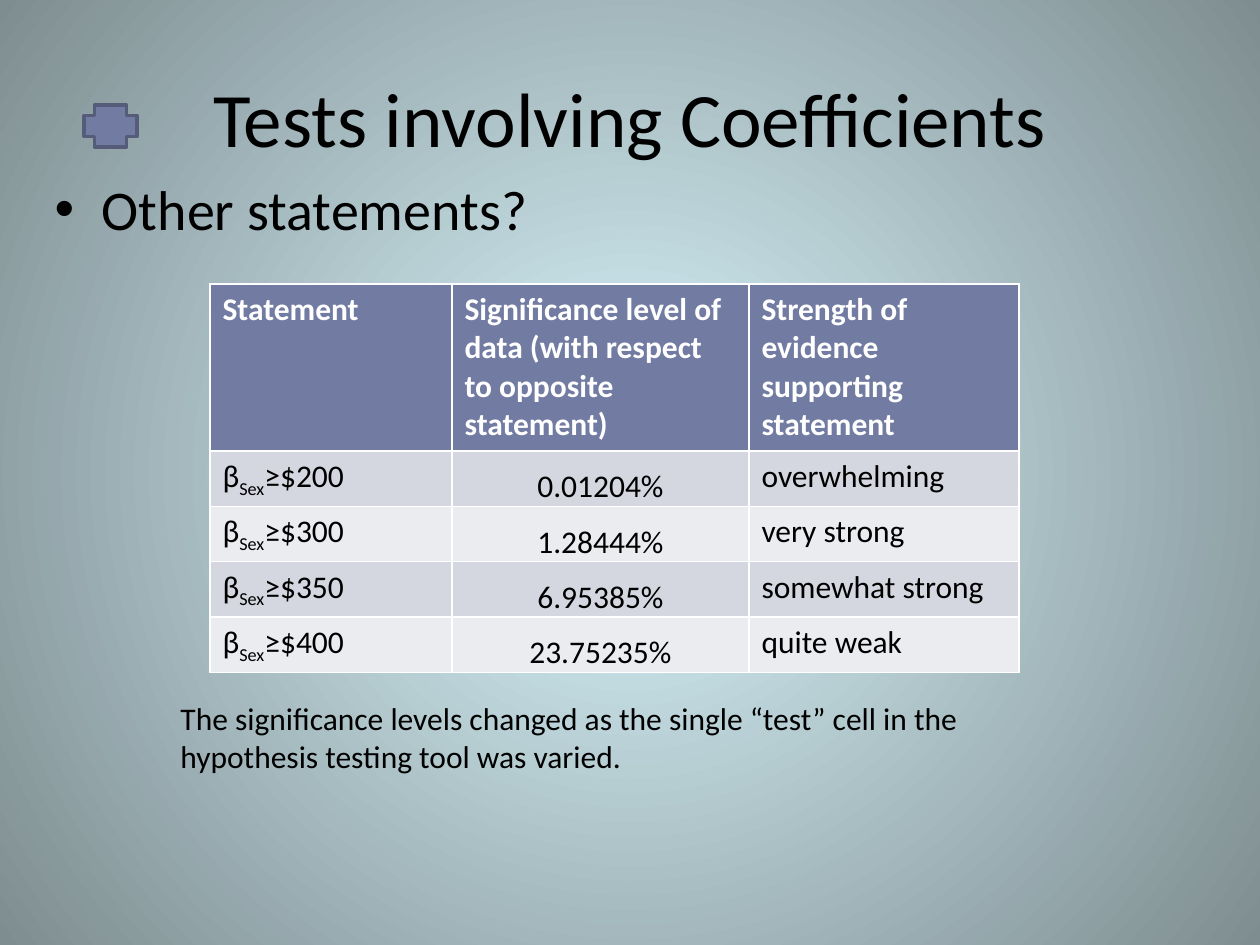
from dataclasses import dataclass

from pptx import Presentation
from pptx.dml.color import RGBColor as RGB
from pptx.enum.shapes import MSO_SHAPE as Shape
from pptx.enum.text import MSO_ANCHOR as Anchor, MSO_AUTO_SIZE as AutoSize, PP_ALIGN as Align
from pptx.oxml import parse_xml
from pptx.oxml.ns import nsdecls, qn
from pptx.util import Emu, Pt

PX_PER_INCH = 126


@dataclass(frozen=True)
class Theme:
    """Colours, font and type sizes of the slide."""
    font: str = "Calibri"
    title: int = 44
    bullet: int = 32
    text: int = 18
    ink: RGB = RGB(0x00, 0x00, 0x00)
    white: RGB = RGB(0xFF, 0xFF, 0xFF)
    accent: RGB = RGB(0x72, 0x7C, 0xA3)
    outline: RGB = RGB(0x54, 0x5C, 0x79)
    bands: tuple = (RGB(0xD5, 0xD7, 0xE0), RGB(0xEB, 0xEC, 0xF0))
    glow: tuple = (RGB(0xD9, 0xF5, 0xFC), RGB(0x7E, 0x8D, 0x90))


THEME = Theme()
HEADINGS = (
    "Statement",
    "Significance level of data (with respect to opposite statement)",
    "Strength of evidence supporting statement",
)
FINDINGS = (
    ("≥$200", "0.01204%", "overwhelming"),
    ("≥$300", "1.28444%", "very strong"),
    ("≥$350", "6.95385%", "somewhat strong"),
    ("≥$400", "23.75235%", "quite weak"),
)
COLUMN_WIDTHS = (242, 297, 270)
HEADER_HEIGHT, ROW_HEIGHT = 167, 55


def px(length):
    """Turn whole px into EMU."""
    return Emu(round(length * 914400 / PX_PER_INCH))


def place(part, box):
    """Move a placeholder to a box in px."""
    part.left, part.top, part.width, part.height = map(px, box)


def style(paragraph, size, color=THEME.ink, bold=False):
    """Set the font of a whole paragraph."""
    font = paragraph.font
    font.name, font.size, font.bold = THEME.font, Pt(size), bold
    font.color.rgb = color


def paint_background(slide):
    """Fill the slide with a glow that darkens from its centre."""
    fill = slide.background.fill
    fill.gradient()
    for stop, color, position in zip(fill.gradient_stops, THEME.glow, (0, 1)):
        stop.color.rgb, stop.position = color, position
    gradient = slide.element.find(".//" + qn("a:gradFill"))
    gradient.replace(gradient.find(qn("a:lin")), parse_xml(
        f'<a:path {nsdecls("a")} path="circle">'
        '<a:fillToRect l="50000" t="50000" r="50000" b="50000"/></a:path>'))


def fill_heading(title, box):
    """Place the centred title."""
    place(title, box)
    title.text_frame.text = "Tests involving Coefficients"
    title.text_frame.vertical_anchor = Anchor.MIDDLE
    paragraph = title.text_frame.paragraphs[0]
    paragraph.alignment = Align.CENTER
    style(paragraph, THEME.title)


def fill_question(body, box):
    """Place the bulleted question."""
    place(body, box)
    body.text_frame.text = "Other statements?"
    style(body.text_frame.paragraphs[0], THEME.bullet)


def write_statement(paragraph, bound):
    """Write a bound on the coefficient with its subscript."""
    for text, baseline in (("β", None), ("Sex", "-25000"), (bound, None)):
        run = paragraph.add_run()
        run.text = text
        if baseline:
            run.font._element.set("baseline", baseline)


def add_findings(slide, box):
    """Add the table of statements and their evidence."""
    table = slide.shapes.add_table(
        len(FINDINGS) + 1, len(HEADINGS), *map(px, box)).table
    for column, width in zip(table.columns, COLUMN_WIDTHS):
        column.width = px(width)
    for index, row in enumerate(table.rows):
        row.height = px(ROW_HEIGHT if index else HEADER_HEIGHT)

    def paint(cell, fill):
        cell.fill.solid()
        cell.fill.fore_color.rgb = fill
        return cell.text_frame.paragraphs[0]

    for column, heading in enumerate(HEADINGS):
        paragraph = paint(table.cell(0, column), THEME.accent)
        paragraph.text = heading
        style(paragraph, THEME.text, THEME.white, True)
    for row, (bound, level, strength) in enumerate(FINDINGS, 1):
        cells = [table.cell(row, column) for column in range(len(HEADINGS))]
        statement, significance, evidence = (
            paint(cell, THEME.bands[(row - 1) % 2]) for cell in cells)
        write_statement(statement, bound)
        significance.text, evidence.text = level, strength
        significance.alignment = Align.CENTER
        level_cell = cells[1]
        level_cell.vertical_anchor = Anchor.BOTTOM
        level_cell.margin_left = level_cell.margin_right = level_cell.margin_top = px(1)
        level_cell.margin_bottom = 0
        for paragraph in (statement, significance, evidence):
            style(paragraph, THEME.text)


def add_plus(slide, box):
    """Add the plus sign beside the title."""
    plus = slide.shapes.add_shape(Shape.CROSS, *map(px, box))
    plus.shadow.inherit = False
    plus.fill.solid()
    plus.fill.fore_color.rgb = THEME.accent
    plus.line.color.rgb = THEME.outline
    plus.line.width = Pt(2)


def add_remark(slide, box):
    """Add the remark below the table."""
    frame = slide.shapes.add_textbox(*map(px, box)).text_frame
    frame.word_wrap = True
    frame.auto_size = AutoSize.SHAPE_TO_FIT_TEXT
    frame.text = ("The significance levels changed as the single “test” cell "
                  "in the hypothesis testing tool was varied.")
    style(frame.paragraphs[0], THEME.text)


def main():
    """Build the slide and save it."""
    deck = Presentation()
    deck.slide_width, deck.slide_height = px(1260), px(945)
    slide = deck.slides.add_slide(deck.slide_layouts[1])
    paint_background(slide)
    fill_heading(slide.shapes.title, (63, 38, 1134, 158))
    fill_question(slide.placeholders[1], (42, 168, 1176, 662))
    add_findings(slide, (210, 284, sum(COLUMN_WIDTHS),
                         HEADER_HEIGHT + ROW_HEIGHT * len(FINDINGS)))
    add_plus(slide, (84, 105, 53, 42))
    add_remark(slide, (168, 693, 914, 89))
    deck.save("out.pptx")


if __name__ == "__main__":
    main()
